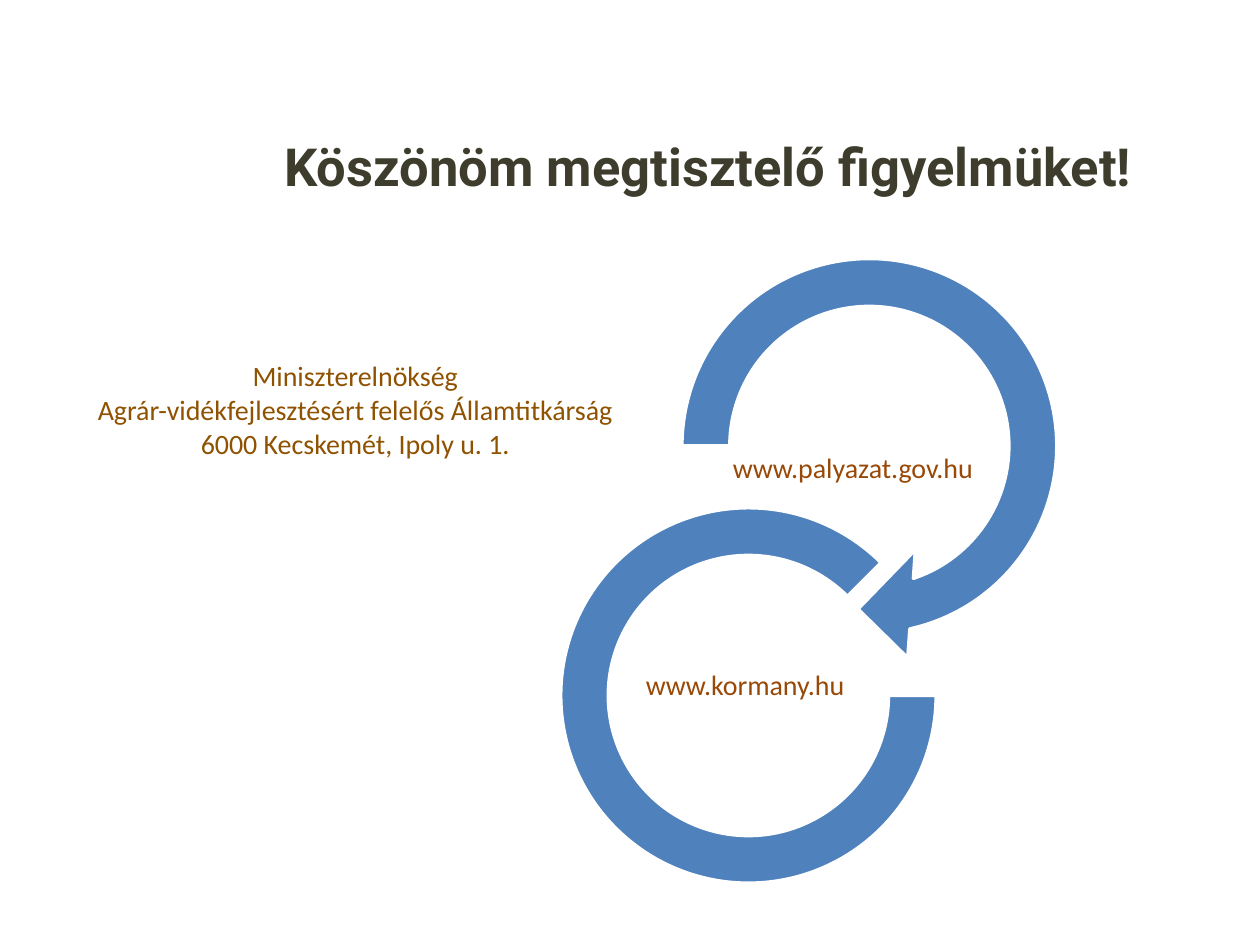
import dataclasses
import pptx
import pptx.dml.color
import pptx.enum.shapes
import pptx.enum.text
import pptx.util

Inches = pptx.util.Inches
Pt = pptx.util.Pt
RGB = pptx.dml.color.RGBColor.from_string
SHAPE = pptx.enum.shapes.MSO_SHAPE
ANCHOR = pptx.enum.text.MSO_ANCHOR
AUTO = pptx.enum.text.MSO_AUTO_SIZE


@dataclasses.dataclass(frozen=True)
class Theme:
    title_font: str = "Roboto"
    body_font: str = "Calibri"
    title_size: float = 30
    body_size: float = 16
    title: str = "3E3D2D"
    link: str = "984807"
    address: str = "8F5201"
    ring: str = "4F81BD"
    edge: str = "FFFFFF"
    edge_width: float = 2


class Page:
    def __init__(self, slide, theme):
        self.s = slide
        self.theme = theme

    def text(self, box, lines, color, font, size, bold=False, anchor=ANCHOR.TOP):
        sp = self.s.shapes.add_textbox(*map(Inches, box))
        tf = sp.text_frame
        tf.word_wrap = True
        tf.vertical_anchor = anchor
        tf.text = "\n".join(lines)
        for p in tf.paragraphs:
            p.alignment = pptx.enum.text.PP_ALIGN.CENTER
            for r in p.runs:
                r.font.name = font
                r.font.size = Pt(size)
                r.font.bold = bold
                r.font.color.rgb = RGB(color)
        return tf

    def title(self, box, text):
        t = self.theme
        self.text(box, [text], t.title, t.title_font, t.title_size, True, ANCHOR.MIDDLE)

    def address(self, box, lines):
        t = self.theme
        tf = self.text(box, lines, t.address, t.body_font, t.body_size)
        tf.auto_size = AUTO.SHAPE_TO_FIT_TEXT

    def link(self, box, text):
        t = self.theme
        tf = self.text(box, [text], t.link, t.body_font, t.body_size, anchor=ANCHOR.MIDDLE)
        tf.margin_left = tf.margin_top = tf.margin_bottom = Inches(0.01)
        tf.margin_right = Inches(0.13)
        tf.paragraphs[0].line_spacing = 0.9

    def ring(self, kind, left, top, size, adjustments):
        sp = self.s.shapes.add_shape(kind, *map(Inches, (left, top, size, size)))
        for i, value in enumerate(adjustments):
            sp.adjustments[i] = value
        sp.shadow.inherit = False
        sp.fill.solid()
        sp.fill.fore_color.rgb = RGB(self.theme.ring)
        sp.line.color.rgb = RGB(self.theme.edge)
        sp.line.width = Pt(self.theme.edge_width)


def main():
    prs = pptx.Presentation()
    prs.slide_width = Inches(10)
    prs.slide_height = Inches(7.5)
    page = Page(prs.slides.add_slide(prs.slide_layouts[6]), Theme())

    page.title((1.84, 0.84, 7.56, 0.94), "Köszönöm megtisztelő figyelmüket!")
    page.ring(SHAPE.CIRCULAR_ARROW, 5.17, 1.81, 3.46, (0.11, 11.42, 45, 108, 0.125))
    page.link((5.56, 3.24, 2.54, 0.97), "www.palyazat.gov.hu")
    page.ring(SHAPE.BLOCK_ARC, 4.45, 4.03, 2.98, (0, 189, 0.127))
    page.link((5.01, 4.96, 1.93, 0.97), "www.kormany.hu")
    page.address((0.34, 2.8, 4.96, 0.91), [
        "Miniszterelnökség",
        "Agrár-vidékfejlesztésért felelős Államtitkárság",
        "6000 Kecskemét, Ipoly u. 1.",
    ])
    prs.save("out.pptx")


if __name__ == "__main__":
    main()
